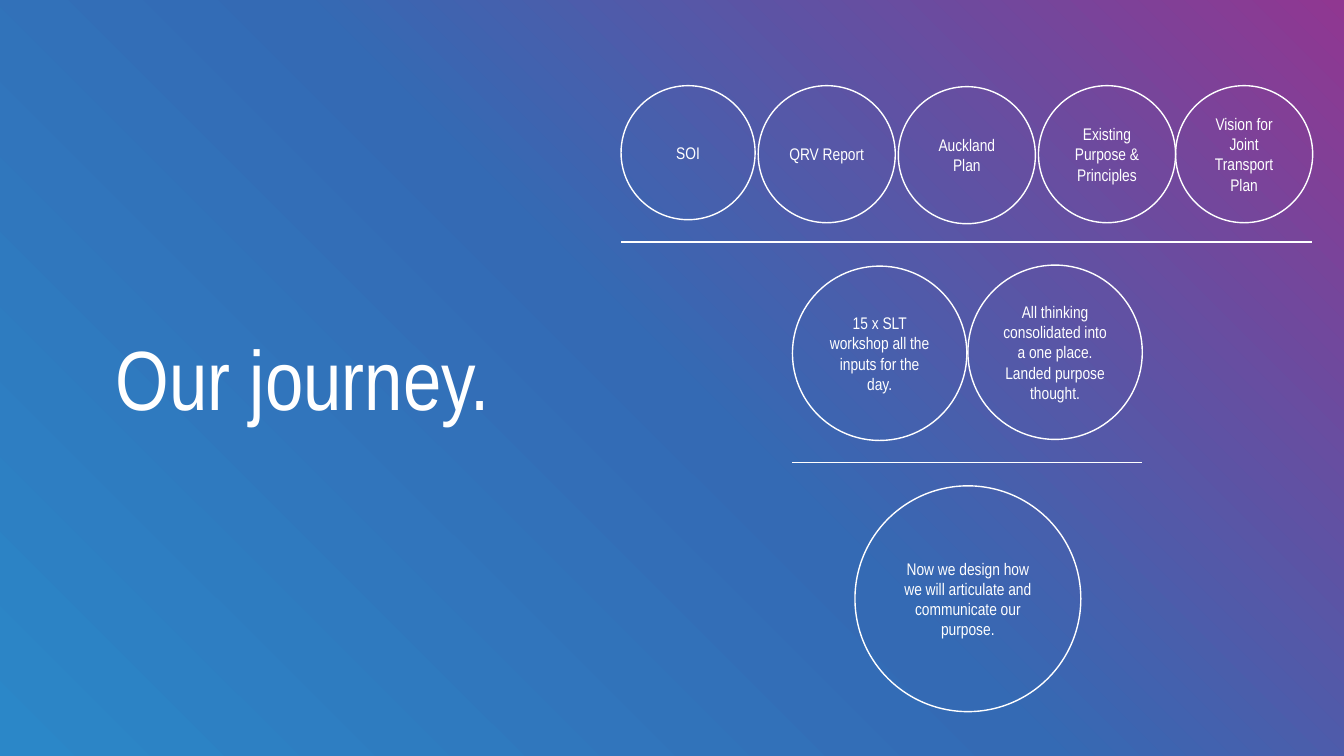
from copy import deepcopy

from lxml import etree
from pptx import Presentation
from pptx.dml.color import RGBColor
from pptx.enum.shapes import MSO_CONNECTOR, MSO_SHAPE
from pptx.enum.text import MSO_ANCHOR, MSO_AUTO_SIZE, PP_ALIGN
from pptx.oxml.ns import qn
from pptx.util import Pt

EMU_PER_PX = 9144
WHITE = RGBColor(0xFF, 0xFF, 0xFF)
SKY = RGBColor(0x2B, 0x87, 0xC8)
BLUE = RGBColor(0x34, 0x6A, 0xB4)
PURPLE = RGBColor(0x90, 0x37, 0x91)
OVAL = MSO_SHAPE.OVAL
STRAIGHT = MSO_CONNECTOR.STRAIGHT
LEFT, CENTER = PP_ALIGN.LEFT, PP_ALIGN.CENTER
TOP, MIDDLE = MSO_ANCHOR.TOP, MSO_ANCHOR.MIDDLE
NO_FIT, GROW = MSO_AUTO_SIZE.NONE, MSO_AUTO_SIZE.SHAPE_TO_FIT_TEXT
TITLE_ONLY = 5

INPUTS = [
    (616, 85, 133, "SOI"),
    (752, 85, 136, "QRV Report"),
    (891, 86, 136, "Auckland Plan"),
    (1030, 85, 136, "Existing Purpose & Principles"),
    (1166, 85, 136, "Vision for Joint Transport Plan"),
]
WORKSHOPS = [
    (786, 264, 173, "15 x SLT workshop all the inputs for the day."),
    (960, 263, 173, "All thinking consolidated into a one place. Landed purpose thought."),
]
OUTCOME = [
    (848, 482, 224, "Now we design how we will articulate and communicate our purpose."),
]
DIVIDERS = [(616, 1301, 240), (786, 1133, 459)]


def px(value):
    return value * EMU_PER_PX


def apply(target, values):
    for key, value in values.items():
        setattr(target, key, value)


class JourneySlide:
    font = {"name": "Arial Narrow", "bold": False}

    def __init__(self, deck):
        self.slide = deck.slides.add_slide(deck.slide_layouts[TITLE_ONLY])

    def background(self, colours, angle):
        fill = self.slide.background.fill
        fill.gradient()
        fill.gradient_angle = angle
        stop_list = self.slide.element.find(".//" + qn("a:gsLst"))
        stop_list.insert(1, deepcopy(stop_list[0]))
        for index, (stop, colour) in enumerate(zip(fill.gradient_stops, colours)):
            stop.color.rgb = colour
            stop.position = index / (len(colours) - 1)

    def set_text(self, shape, text, size, align, anchor, fit):
        frame = shape.text_frame
        frame.text = text
        apply(frame, {"word_wrap": True, "vertical_anchor": anchor, "auto_size": fit})
        paragraph = frame.paragraphs[0]
        paragraph.alignment = align
        font = paragraph.runs[0].font
        apply(font, {**self.font, "size": Pt(size)})
        font.color.rgb = WHITE

    def title(self, left, top, width, height, text):
        heading = self.slide.shapes.title
        apply(heading, {"left": px(left), "top": px(top),
                        "width": px(width), "height": px(height)})
        self.set_text(heading, text, 60, LEFT, TOP, GROW)

    def outline(self, line):
        line.color.rgb = WHITE
        line.width = Pt(1)

    def circle(self, left, top, diameter, text):
        step = self.slide.shapes.add_shape(
            OVAL, px(left), px(top), px(diameter), px(diameter))
        step.shadow.inherit = False
        step.fill.background()
        self.outline(step.line)
        self.set_text(step, text, 12, CENTER, MIDDLE, NO_FIT)

    def divider(self, start, end, y):
        rule = self.slide.shapes.add_connector(STRAIGHT, px(start), px(y), px(end), px(y))
        self.outline(rule.line)
        etree.SubElement(rule.element.spPr, qn("a:effectLst"))


def main():
    deck = Presentation()
    apply(deck, {"slide_width": px(1333), "slide_height": px(750)})
    journey = JourneySlide(deck)
    journey.background([SKY, BLUE, PURPLE], 45)
    journey.title(105, 319, 791, 111, "Our journey.")
    for step in INPUTS + WORKSHOPS + OUTCOME:
        journey.circle(*step)
    for divider in DIVIDERS:
        journey.divider(*divider)
    deck.save("out.pptx")


if __name__ == "__main__":
    main()
